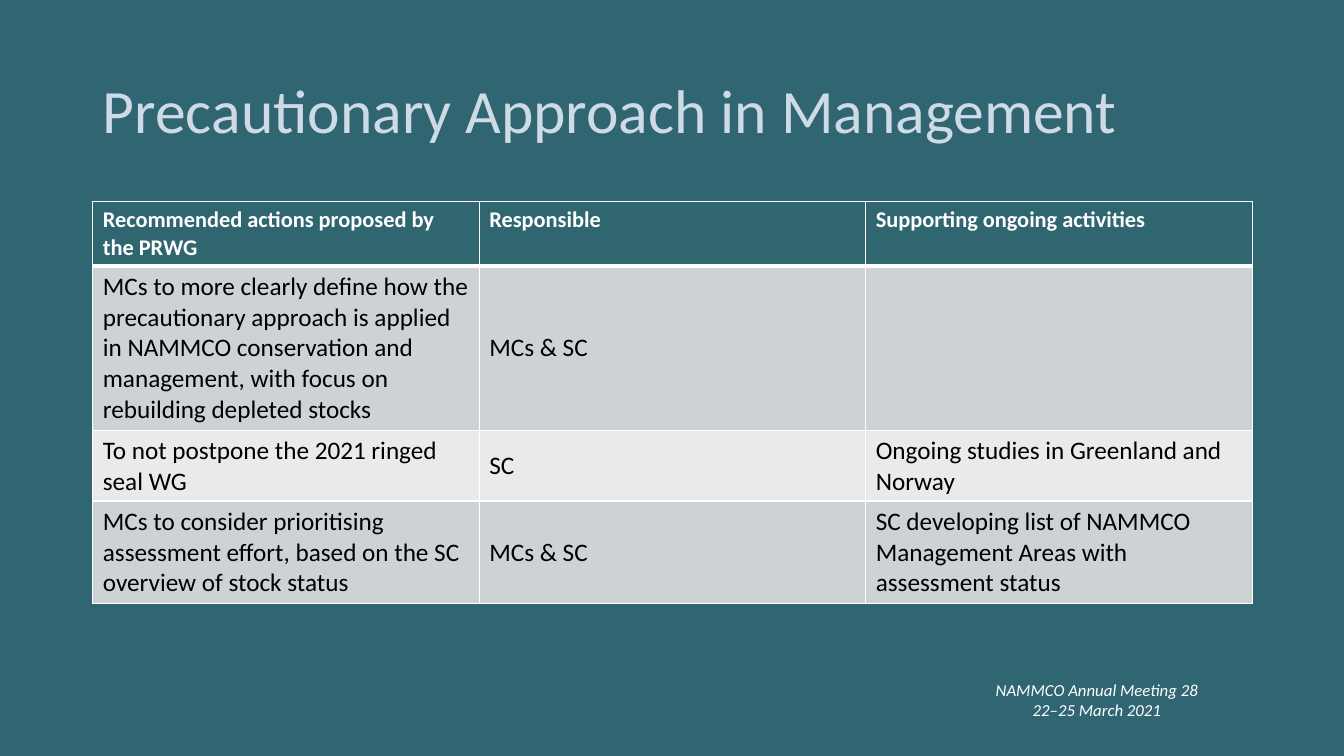
import pptx
import pptx.util
import pptx.dml.color
import pptx.enum.text
import pptx.oxml
import pptx.oxml.ns
from dataclasses import dataclass

# Content
TITLE = "Precautionary Approach in Management"
FOOTER = ["NAMMCO Annual Meeting 28", "22–25 March 2021"]
ACTIONS = [
    ("Recommended actions proposed by the PRWG", "Responsible",
     "Supporting ongoing activities"),
    ("MCs to more clearly define how the precautionary approach is applied in NAMMCO "
     "conservation and management, with focus on rebuilding depleted stocks",
     "MCs & SC", ""),
    ("To not postpone the 2021 ringed seal WG", "SC",
     "Ongoing studies in Greenland and Norway"),
    ("MCs to consider prioritising assessment effort, based on the SC overview of stock status",
     "MCs & SC", "SC developing list of NAMMCO Management Areas with assessment status"),
]


@dataclass(frozen=True)
class Theme:
    font: str = "Calibri"
    background: str = "306672"
    title: str = "CEDBE6"
    header: str = "306670"
    bands: tuple = ("CDD3D5", "E8EAEB")
    light: str = "FFFFFF"
    dark: str = "000000"
    title_size: int = 44
    header_size: int = 16
    body_size: int = 18
    footer_size: int = 12
    rule: int = 1
    header_rule: int = 3


THEME = Theme()

# Layout in inches
WIDTH, HEIGHT = 13.33, 7.5
MARGIN = 0.92
CONTENT_WIDTH = 11.5
TITLE_BOX = (MARGIN, 0.4, CONTENT_WIDTH, 1.45)
FOOTER_BOX = (9.73, 6.74, 2.3, 0.4)
TABLE_TOP = 2
ROW_HEIGHTS = (0.64, 1.63, 0.7, 1.02)

MIDDLE = pptx.enum.text.MSO_ANCHOR.MIDDLE
TOP = pptx.enum.text.MSO_ANCHOR.TOP


def inches(lengths):
    return [pptx.util.Inches(length) for length in lengths]


def rgb(color):
    return pptx.dml.color.RGBColor.from_string(color)


def add_run(paragraph, text, size, color, bold=False, italic=False):
    run = paragraph.add_run()
    run.text = text
    run.font.name = THEME.font
    run.font.size = pptx.util.Pt(size)
    run.font.color.rgb = rgb(color)
    run.font.bold = bold
    run.font.italic = italic


def add_borders(cell, top, bottom):
    properties = cell._tc.get_or_add_tcPr()
    widths = {"lnL": THEME.rule, "lnR": THEME.rule, "lnT": top, "lnB": bottom}
    for side, width in widths.items():
        properties.append(pptx.oxml.parse_xml(
            f'<a:{side} {pptx.oxml.ns.nsdecls("a")} w="{pptx.util.Pt(width)}">'
            f'<a:solidFill><a:srgbClr val="{THEME.light}"/></a:solidFill></a:{side}>'))


def add_title(slide):
    title = slide.shapes.title
    title.left, title.top, title.width, title.height = inches(TITLE_BOX)
    title.text_frame.vertical_anchor = MIDDLE
    paragraph = title.text_frame.paragraphs[0]
    paragraph.alignment = pptx.enum.text.PP_ALIGN.LEFT
    paragraph.line_spacing = 0.9
    add_run(paragraph, TITLE, THEME.title_size, THEME.title)


def add_footer(slide):
    frame = slide.shapes.add_textbox(*inches(FOOTER_BOX)).text_frame
    frame.word_wrap = True
    frame.vertical_anchor = MIDDLE
    for index, line in enumerate(FOOTER):
        paragraph = frame.add_paragraph() if index else frame.paragraphs[0]
        paragraph.alignment = pptx.enum.text.PP_ALIGN.CENTER
        add_run(paragraph, line, THEME.footer_size, THEME.light, italic=True)


def add_actions_table(slide):
    box = inches((MARGIN, TABLE_TOP, CONTENT_WIDTH, sum(ROW_HEIGHTS)))
    table = slide.shapes.add_table(len(ACTIONS), len(ACTIONS[0]), *box).table
    for row, height in zip(table.rows, inches(ROW_HEIGHTS)):
        row.height = height
    for row_index, texts in enumerate(ACTIONS):
        is_header = row_index == 0
        fill = THEME.header if is_header else THEME.bands[(row_index - 1) % 2]
        size = THEME.header_size if is_header else THEME.body_size
        color = THEME.light if is_header else THEME.dark
        top = THEME.header_rule if row_index == 1 else THEME.rule
        bottom = THEME.header_rule if is_header else THEME.rule
        for column_index, text in enumerate(texts):
            cell = table.cell(row_index, column_index)
            add_borders(cell, top, bottom)
            cell.fill.solid()
            cell.fill.fore_color.rgb = rgb(fill)
            cell.vertical_anchor = TOP if is_header else MIDDLE
            if text:
                add_run(cell.text_frame.paragraphs[0], text, size, color, bold=is_header)


def main():
    presentation = pptx.Presentation()
    presentation.slide_width, presentation.slide_height = inches((WIDTH, HEIGHT))
    title_only = presentation.slide_layouts.get_by_name("Title Only")
    slide = presentation.slides.add_slide(title_only)
    slide.background.fill.solid()
    slide.background.fill.fore_color.rgb = rgb(THEME.background)
    add_footer(slide)
    add_title(slide)
    add_actions_table(slide)
    presentation.save("out.pptx")


if __name__ == "__main__":
    main()
